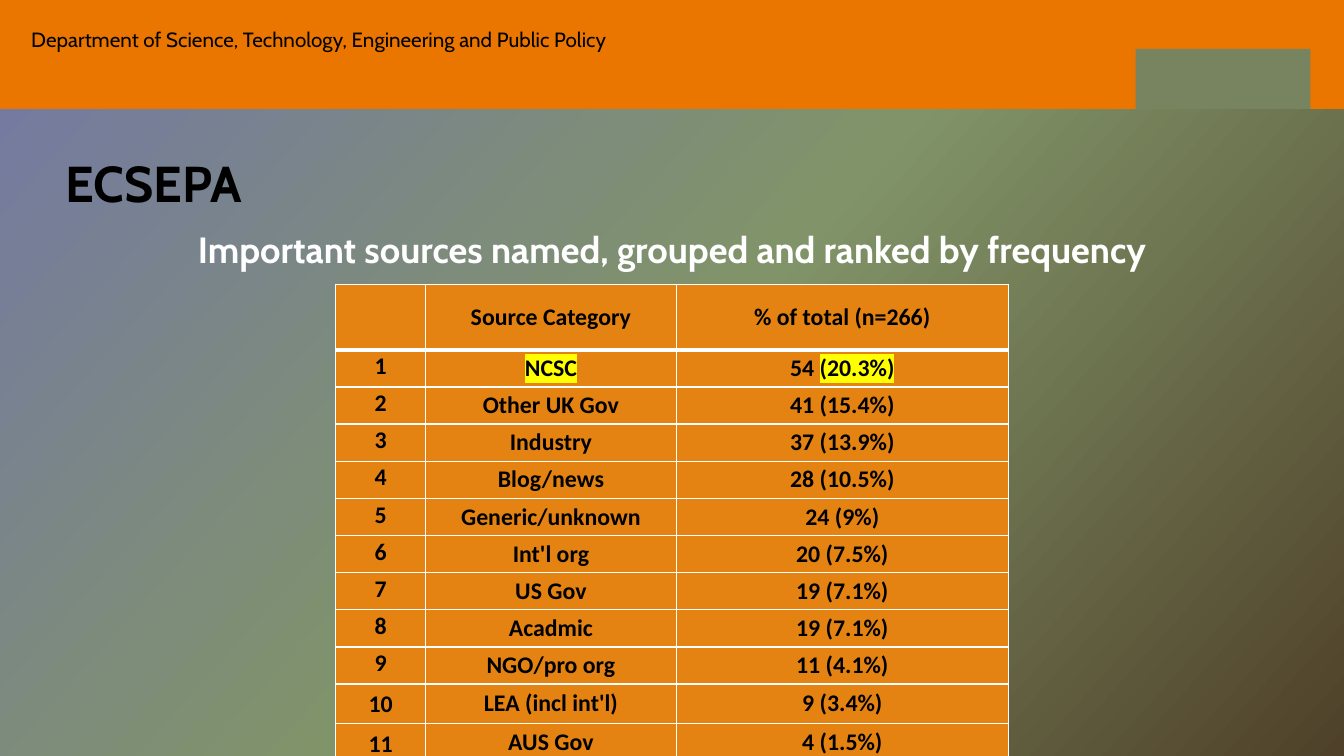
import copy

from lxml import etree
from pptx import Presentation, util as u
from pptx.dml.color import RGBColor
from pptx.enum import shapes, text
from pptx.oxml.ns import qn

WIDTH, HEIGHT = 13.33, 7.5
COLOURS = {"banner": "EA7600", "cell": "E48312", "ink": "000000", "light": "FFFFFF",
           "mark": "FFFF00", "badge": "77845F"}
BACKGROUND = [(0, "7478A6"), (0.5, "819469"), (1, "4F4129")]
COLUMN_WIDTHS = [0.89, 2.49, 3.29]
HEADER_HEIGHT, ROW_HEIGHT = 0.65, 0.36
HEADINGS = ["", "Source Category", "% of total (n=266)"]
SOURCES = [
    ("NCSC", "54 (20.3%)"),
    ("Other UK Gov", "41 (15.4%)"),
    ("Industry", "37 (13.9%)"),
    ("Blog/news", "28 (10.5%)"),
    ("Generic/unknown", "24 (9%)"),
    ("Int'l org", "20 (7.5%)"),
    ("US Gov", "19 (7.1%)"),
    ("Acadmic", "19 (7.1%)"),
    ("NGO/pro org", "11 (4.1%)"),
    ("LEA (incl int'l)", "9 (3.4%)"),
    ("AUS Gov", "4 (1.5%)"),
]


def rgb(name):
    return RGBColor.from_string(COLOURS[name])


def place(shape, box):
    shape.left, shape.top, shape.width, shape.height = map(u.Inches, box)


def format_font(span, size, face, colour="ink", bold=True):
    span.font.size, span.font.name, span.font.bold = u.Pt(size), face, bold
    span.font.color.rgb = rgb(colour)


def set_margins(holder, side, end):
    holder.margin_left = holder.margin_right = u.Inches(side)
    holder.margin_top = holder.margin_bottom = u.Inches(end)


def paint_background(page):
    fill = page.background.fill
    fill.gradient()
    fill.gradient_angle = 360 - 42
    first = next(page.element.iter(qn("a:gs")))
    first.addnext(copy.deepcopy(first))
    for stop, (position, colour) in zip(fill.gradient_stops, BACKGROUND):
        stop.position = position
        stop.color.rgb = RGBColor.from_string(colour)


def add_block(page, box, colour):
    block = page.shapes.add_shape(shapes.MSO_SHAPE.RECTANGLE, *map(u.Inches, box))
    block.shadow.inherit = False
    block.fill.solid()
    block.fill.fore_color.rgb = rgb(colour)
    block.line.fill.background()
    return block


def add_banner(page, box):
    left, top, width, height = box
    banner = add_block(page, box, "banner")
    badge = add_block(page, (left + 0.845 * width, top + 0.45 * height,
                             0.13 * width, 0.55 * height), "badge")
    # Blocks lie behind the placeholders
    tree = page.shapes.element
    for index, block in enumerate((banner, badge)):
        tree.insert(2 + index, block.element)


def write_line(shape, box, words, size, spacing, colour="ink", bold=True):
    place(shape, box)
    frame = shape.text_frame
    frame.text = words
    frame.word_wrap = True
    frame.auto_size = text.MSO_AUTO_SIZE.NONE
    frame.vertical_anchor = text.MSO_ANCHOR.TOP
    para = frame.paragraphs[0]
    para.alignment = text.PP_ALIGN.LEFT
    para.line_spacing = spacing
    para.space_before = u.Pt(0)
    format_font(para.runs[0], size, "Cabin", colour, bold)
    return para


def add_department(page, box):
    body = page.placeholders[1]
    para = write_line(body, box, "Department of Science, Technology, Engineering and Public Policy",
                      14.7, 0.8, bold=False)
    set_margins(body.text_frame, 0, 0)
    # Plain line without bullet or indent
    properties = para._p.get_or_add_pPr()
    properties.set("marL", "0")
    properties.set("indent", "0")
    etree.SubElement(properties, qn("a:buNone"))


def add_subtitle(page, box):
    subtitle = page.shapes.add_textbox(*map(u.Inches, box))
    para = write_line(subtitle, box, "Important sources named, grouped and ranked by frequency",
                      26, 1.07, "light")
    para.alignment = text.PP_ALIGN.CENTER
    para.space_after = u.Pt(8)


def draw_borders(cell, top, bottom):
    properties = cell._tc.get_or_add_tcPr()
    for side, points in (("L", 1), ("R", 1), ("T", top), ("B", bottom)):
        line = etree.SubElement(properties, qn(f"a:ln{side}"), w=str(u.Pt(points)))
        fill = etree.SubElement(line, qn("a:solidFill"))
        etree.SubElement(fill, qn("a:srgbClr"), val=COLOURS["light"])


def highlight(span):
    mark = etree.Element(qn("a:highlight"))
    etree.SubElement(mark, qn("a:srgbClr"), val=COLOURS["mark"])
    span._r.rPr.find(qn("a:solidFill")).addnext(mark)


def fill_cell(cell, row, column, pieces):
    draw_borders(cell, 3 if row == 1 else 1, 3 if row == 0 else 1)
    cell.fill.solid()
    cell.fill.fore_color.rgb = rgb("cell")
    para = cell.text_frame.paragraphs[0]
    para.alignment = text.PP_ALIGN.CENTER
    if column == 0 and row > 0:
        para.line_spacing = 1.07
    # One-digit ranks sit at the top of their cells
    if column == 0 and 0 < row < 10:
        cell.vertical_anchor = text.MSO_ANCHOR.TOP
        set_margins(cell, 0.07, 0)
    else:
        cell.vertical_anchor = text.MSO_ANCHOR.MIDDLE
        set_margins(cell, 0.08, 0.04)
    for words, marked in pieces:
        span = para.add_run()
        span.text = words
        format_font(span, 17, "Calibri")
        if marked:
            highlight(span)


def add_source_table(page, box):
    rows = [HEADINGS] + [(str(rank), *source) for rank, source in enumerate(SOURCES, 1)]
    table = page.shapes.add_table(len(rows), len(HEADINGS), *map(u.Inches, box)).table
    for column, width in zip(table.columns, COLUMN_WIDTHS):
        column.width = u.Inches(width)
    for index, row in enumerate(rows):
        table.rows[index].height = u.Inches(ROW_HEIGHT if index else HEADER_HEIGHT)
        for column, words in enumerate(row):
            pieces = [(words, False)] if words else []
            # The leading source is highlighted, apart from its count
            if index == 1 and column == 1:
                pieces = [(words, True)]
            elif index == 1 and column == 2:
                count, share = words.split()
                pieces = [(count + " ", False), (share, True)]
            fill_cell(table.cell(index, column), index, column, pieces)


def build_sources_slide(deck):
    page = deck.slides.add_slide(deck.slide_layouts[1])
    paint_background(page)
    add_banner(page, (0, 0, WIDTH, 0.144 * HEIGHT))
    add_department(page, (0.31, 0.31, 0.6 * WIDTH, 0.43))
    write_line(page.shapes.title, (0.55, 1.53, 10.51, 1.18), "ECSEPA", 36, 0.9)
    add_subtitle(page, (0.43, 2.17, 12.48, 0.54))
    table_width = sum(COLUMN_WIDTHS)
    table_height = HEADER_HEIGHT + ROW_HEIGHT * len(SOURCES)
    add_source_table(page, ((WIDTH - table_width) / 2, 2.82, table_width, table_height))


def main():
    deck = Presentation()
    deck.slide_width, deck.slide_height = u.Inches(WIDTH), u.Inches(HEIGHT)
    build_sources_slide(deck)
    deck.save("out.pptx")


if __name__ == "__main__":
    main()
